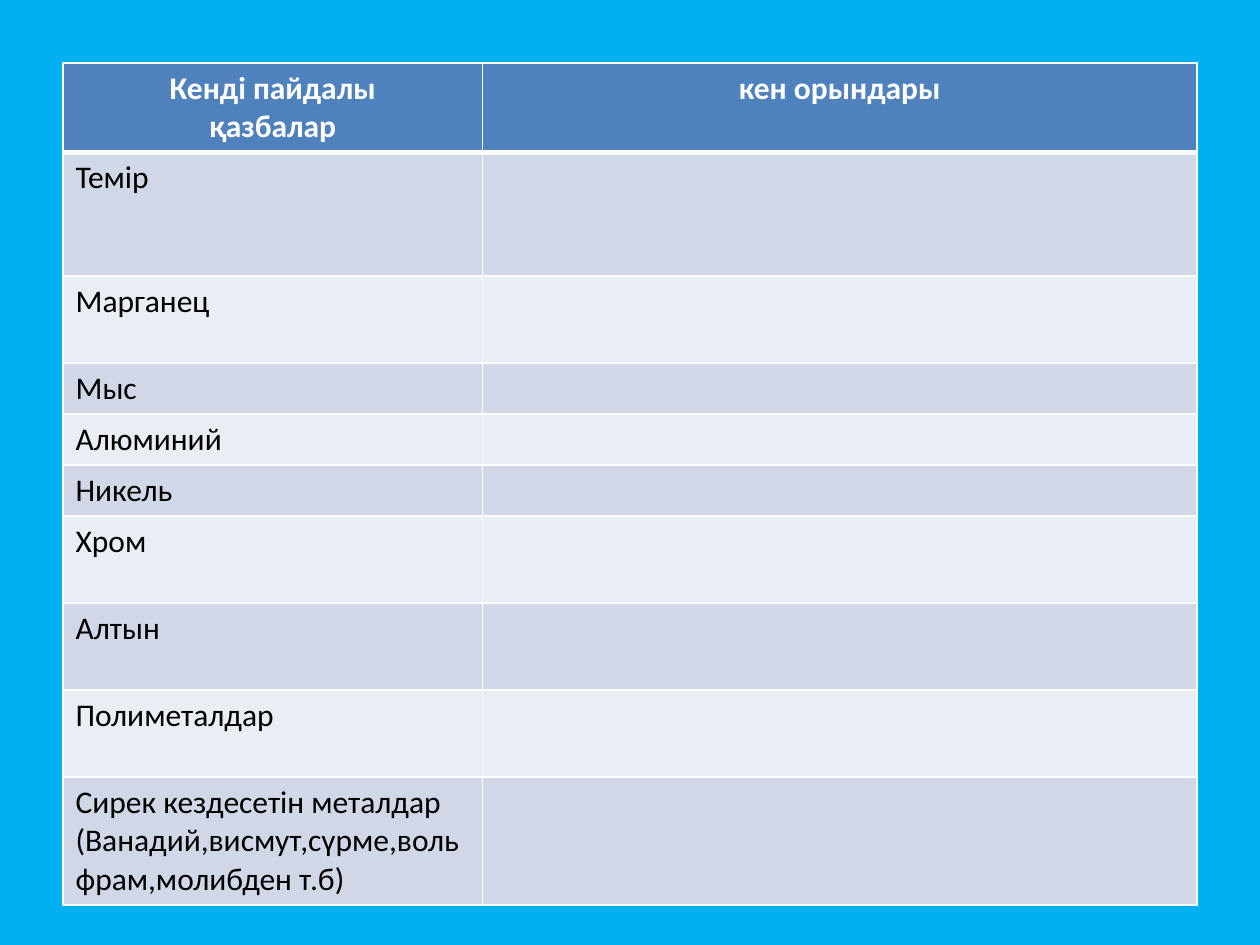
from lxml import etree
from pptx import Presentation
from pptx.dml.color import RGBColor
from pptx.enum.text import PP_ALIGN
from pptx.oxml.ns import qn
from pptx.util import Inches, Pt

CENTER, LEFT = PP_ALIGN.CENTER, PP_ALIGN.LEFT
SKY = RGBColor(0x00, 0xB0, 0xF0)
BLUE = RGBColor(0x4F, 0x81, 0xBD)
BANDS = (RGBColor(0xD0, 0xD8, 0xE8), RGBColor(0xE9, 0xED, 0xF4))
WHITE = RGBColor(0xFF, 0xFF, 0xFF)
BLACK = RGBColor(0x00, 0x00, 0x00)

HEADERS = ("Кенді пайдалы\vқазбалар", "кен орындары")
HEADER_HEIGHT = 0.69
COLUMN_WIDTHS = (3.33, 5.67)
MINERALS = (
    ("Темір", 0.98),
    ("Марганец", 0.69),
    ("Мыс", 0.39),
    ("Алюминий", 0.39),
    ("Никель", 0.39),
    ("Хром", 0.69),
    ("Алтын", 0.69),
    ("Полиметалдар", 0.69),
    ("Сирек кездесетін металдар (Ванадий,висмут,сүрме,вольфрам,молибден т.б)", 0.98),
)


def set_borders(cell, bottom):
    """Draw white cell borders, 1 pt except for the given bottom width."""
    tc_pr = cell._tc.get_or_add_tcPr()
    sides = (("a:lnL", 1), ("a:lnR", 1), ("a:lnT", 1), ("a:lnB", bottom))
    for i, (tag, width) in enumerate(sides):
        ln = etree.Element(qn(tag), w=str(Pt(width)))
        fill = etree.SubElement(ln, qn("a:solidFill"))
        etree.SubElement(fill, qn("a:srgbClr"), val=str(WHITE))
        tc_pr.insert(i, ln)


def style_cell(cell, text, fill, color, bold=False, align=LEFT, bottom=1):
    cell.fill.solid()
    cell.fill.fore_color.rgb = fill
    set_borders(cell, bottom)
    cell.text_frame.text = text
    p = cell.text_frame.paragraphs[0]
    p.alignment = align
    p.font.size = Pt(18)
    for r in p.runs:
        r.font.name = "Calibri"
        r.font.size = Pt(18)
        r.font.bold = bold
        r.font.color.rgb = color


def add_minerals_table(s, left, top, width, height):
    table = s.shapes.add_table(len(MINERALS) + 1, len(HEADERS),
                               left, top, width, height).table
    for column, w in zip(table.columns, COLUMN_WIDTHS):
        column.width = Inches(w)

    table.rows[0].height = Inches(HEADER_HEIGHT)
    for i, header in enumerate(HEADERS):
        style_cell(table.cell(0, i), header, BLUE, WHITE, True, CENTER, 3)

    for i, (mineral, h) in enumerate(MINERALS, start=1):
        table.rows[i].height = Inches(h)
        for j, text in enumerate((mineral, "")):
            style_cell(table.cell(i, j), text, BANDS[(i - 1) % 2], BLACK)


def main():
    prs = Presentation()
    prs.slide_width, prs.slide_height = Inches(10), Inches(7.5)
    s = prs.slides.add_slide(prs.slide_layouts[6])
    s.background.fill.solid()
    s.background.fill.fore_color.rgb = SKY
    add_minerals_table(s, Inches(0.5), Inches(0.5), Inches(9), Inches(6.63))
    prs.save("out.pptx")


if __name__ == "__main__":
    main()
